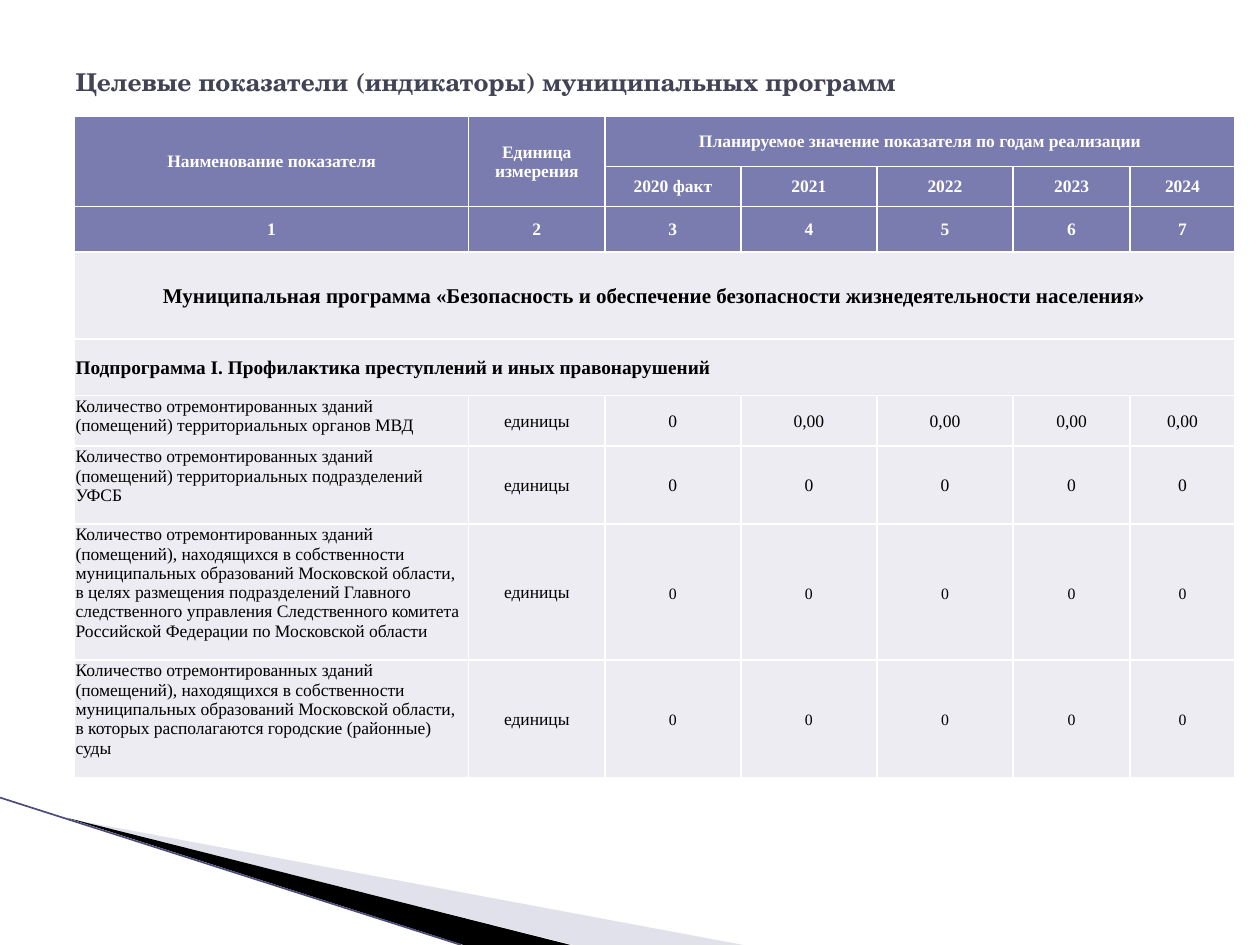
from dataclasses import dataclass

from lxml import etree
from pptx import Presentation
from pptx import util as u
from pptx.dml.color import RGBColor
from pptx.enum import shapes, text
from pptx.oxml.ns import qn


@dataclass(frozen=True)
class Theme:
    title_font: str = "TeX Gyre Schola"
    table_font: str = "Times New Roman"
    title: str = "424456"
    header: str = "7A7BAE"
    body: str = "ECECF2"
    white: str = "FFFFFF"
    black: str = "000000"
    wedge: str = "B6B6D1"
    edge: str = "4B4C7C"
    title_size: float = 14
    program_size: float = 12
    subprogram_size: float = 11
    table_size: float = 10
    small_size: float = 9


class SlideBuilder:
    def __init__(self, slide, theme):
        self.slide, self.theme = slide, theme

    def set_format(self, font, color, **values):
        font.color.rgb = RGBColor.from_string(color)
        for key, value in values.items():
            setattr(font, key, value)

    def title(self, wording, left, top, width, height):
        title = self.slide.shapes.title
        for key, value in dict(left=left, top=top, width=width, height=height).items():
            setattr(title, key, u.Inches(value))
        frame = title.text_frame
        frame.text = wording
        frame.word_wrap = True
        frame.auto_size = text.MSO_AUTO_SIZE.NONE
        frame.vertical_anchor = text.MSO_ANCHOR.MIDDLE
        heading = frame.paragraphs[0]
        heading.alignment = text.PP_ALIGN.LEFT
        self.set_format(heading.runs[0].font, self.theme.title, bold=True,
                        name=self.theme.title_font, size=u.Pt(self.theme.title_size))

    def wedge(self, points, color, opacity=100):
        start, *rest = [(u.Inches(x), u.Inches(y)) for x, y in points]
        outline = self.slide.shapes.build_freeform(*start)
        outline.add_line_segments(rest, close=True)
        wedge = outline.convert_to_shape()
        wedge.shadow.inherit = False
        wedge.line.fill.background()
        wedge.fill.solid()
        wedge.fill.fore_color.rgb = RGBColor.from_string(color)
        if opacity < 100:
            tint = wedge.fill._xPr.find(".//" + qn("a:srgbClr"))
            etree.SubElement(tint, qn("a:alpha"), val=str(opacity * 1000))

    def line(self, start, end, color, width):
        line = self.slide.shapes.add_connector(
            shapes.MSO_CONNECTOR.STRAIGHT, *map(u.Inches, start + end))
        line.line.color.rgb = RGBColor.from_string(color)
        line.line.width = u.Pt(width)
        etree.SubElement(line._element.spPr, qn("a:effectLst"))

    def table(self, left, top, widths, heights):
        frame = self.slide.shapes.add_table(
            len(heights), len(widths), u.Inches(left), u.Inches(top),
            u.Inches(sum(widths)), u.Inches(sum(heights)))
        table = frame.table
        for column, width in zip(table.columns, widths):
            column.width = u.Inches(width)
        for row, height in zip(table.rows, heights):
            row.height = u.Inches(height)
        return table

    def cell_style(self, cell, color):
        margins = dict(margin_left=0.01, margin_top=0.01, margin_right=0.01, margin_bottom=0)
        for key, value in margins.items():
            setattr(cell, key, u.Inches(value))
        properties = cell._tc.get_or_add_tcPr()
        for side in ("a:lnL", "a:lnR", "a:lnT", "a:lnB"):
            border = etree.SubElement(properties, qn(side), w=str(u.Pt(1)))
            fill = etree.SubElement(border, qn("a:solidFill"))
            etree.SubElement(fill, qn("a:srgbClr"), val=self.theme.white)
        cell.fill.solid()
        cell.fill.fore_color.rgb = RGBColor.from_string(color)

    def cell_text(self, cell, wording, color, size, bold, centred=True, top=False, spacing=None):
        cell.vertical_anchor = text.MSO_ANCHOR.TOP if top else text.MSO_ANCHOR.MIDDLE
        paragraph = cell.text_frame.paragraphs[0]
        paragraph.alignment = text.PP_ALIGN.CENTER if centred else text.PP_ALIGN.LEFT
        if spacing:
            paragraph.line_spacing = spacing
        run = paragraph.add_run()
        run.text = wording
        self.set_format(run.font, color, name=self.theme.table_font, size=u.Pt(size), bold=bold)


HEADER_ROWS = [
    ["Наименование показателя", "Единица измерения",
     "Планируемое значение показателя по годам реализации"] + [None] * 4,
    [None, None, "2020 факт", "2021", "2022", "2023", "2024"],
    [str(number) for number in range(1, 8)],
]
PROGRAM = ("Муниципальная программа «Безопасность и обеспечение безопасности "
           "жизнедеятельности населения»")
SUBPROGRAM = "Подпрограмма I. Профилактика преступлений и иных правонарушений"
REPAIRED = "Количество отремонтированных зданий (помещений)"
OWNED = REPAIRED + ", находящихся в собственности муниципальных образований Московской области, "
INDICATORS = [
    (REPAIRED + " территориальных органов МВД", ["0"] + ["0,00"] * 4),
    (REPAIRED + " территориальных подразделений УФСБ", ["0"] * 5),
    (OWNED + "в целях размещения подразделений Главного следственного управления "
     "Следственного комитета Российской Федерации по Московской области", ["0"] * 5),
    (OWNED + "в которых располагаются городские (районные) суды", ["0"] * 5),
]
WIDTHS = [3.13, 1.08, 1.08, 1.08, 1.08, 0.93, 0.83]
HEIGHTS = [0.4, 0.32, 0.36, 0.69, 0.45, 0.4, 0.62, 1.08, 0.93]
MERGES = [(0, 0, 1, 0), (0, 1, 1, 1), (0, 2, 0, 6), (3, 0, 3, 6), (4, 0, 4, 6)]


def main():
    theme = Theme()
    deck = Presentation()
    deck.slide_width, deck.slide_height = u.Inches(10), u.Inches(7.5)
    page = SlideBuilder(deck.slides.add_slide(deck.slide_layouts[5]), theme)

    # Corner decoration
    page.wedge([(0.55, 6.5), (5.9, 7.5), (4.55, 7.5)], theme.wedge, opacity=40)
    page.wedge([(0.53, 6.49), (4.53, 7.5), (3.68, 7.5)], theme.black)
    page.line((0, 6.33), (3.66, 7.5), theme.edge, 0.95)

    # Title
    page.title("Целевые показатели (индикаторы) муниципальных программ", 0.5, 0.3, 9, 0.69)

    # Table grid
    table = page.table(0.59, 0.92, WIDTHS, HEIGHTS)
    for row in range(len(HEIGHTS)):
        for column in range(len(WIDTHS)):
            color = theme.header if row < len(HEADER_ROWS) else theme.body
            page.cell_style(table.cell(row, column), color)
    for top, left, bottom, right in MERGES:
        table.cell(top, left).merge(table.cell(bottom, right))

    # Column headings
    for row, headings in enumerate(HEADER_ROWS):
        for column, heading in enumerate(headings):
            if heading:
                page.cell_text(table.cell(row, column), heading, theme.white,
                               theme.table_size, True)

    # Programme and subprogramme
    page.cell_text(table.cell(3, 0), PROGRAM, theme.black, theme.program_size, True)
    page.cell_text(table.cell(4, 0), SUBPROGRAM, theme.black, theme.subprogram_size, True,
                   centred=False)

    # Indicators; those on municipal property have smaller values
    for row, (indicator, values) in enumerate(INDICATORS, start=5):
        small = indicator.startswith(OWNED)
        size = theme.small_size if small else theme.table_size
        page.cell_text(table.cell(row, 0), indicator, theme.black, theme.table_size, False,
                       centred=False, top=True)
        page.cell_text(table.cell(row, 1), "единицы", theme.black, theme.table_size, False)
        for column, value in enumerate(values, start=2):
            page.cell_text(table.cell(row, column), value, theme.black, size, False,
                           spacing=1.15 if small else None)

    deck.save("out.pptx")


if __name__ == "__main__":
    main()
